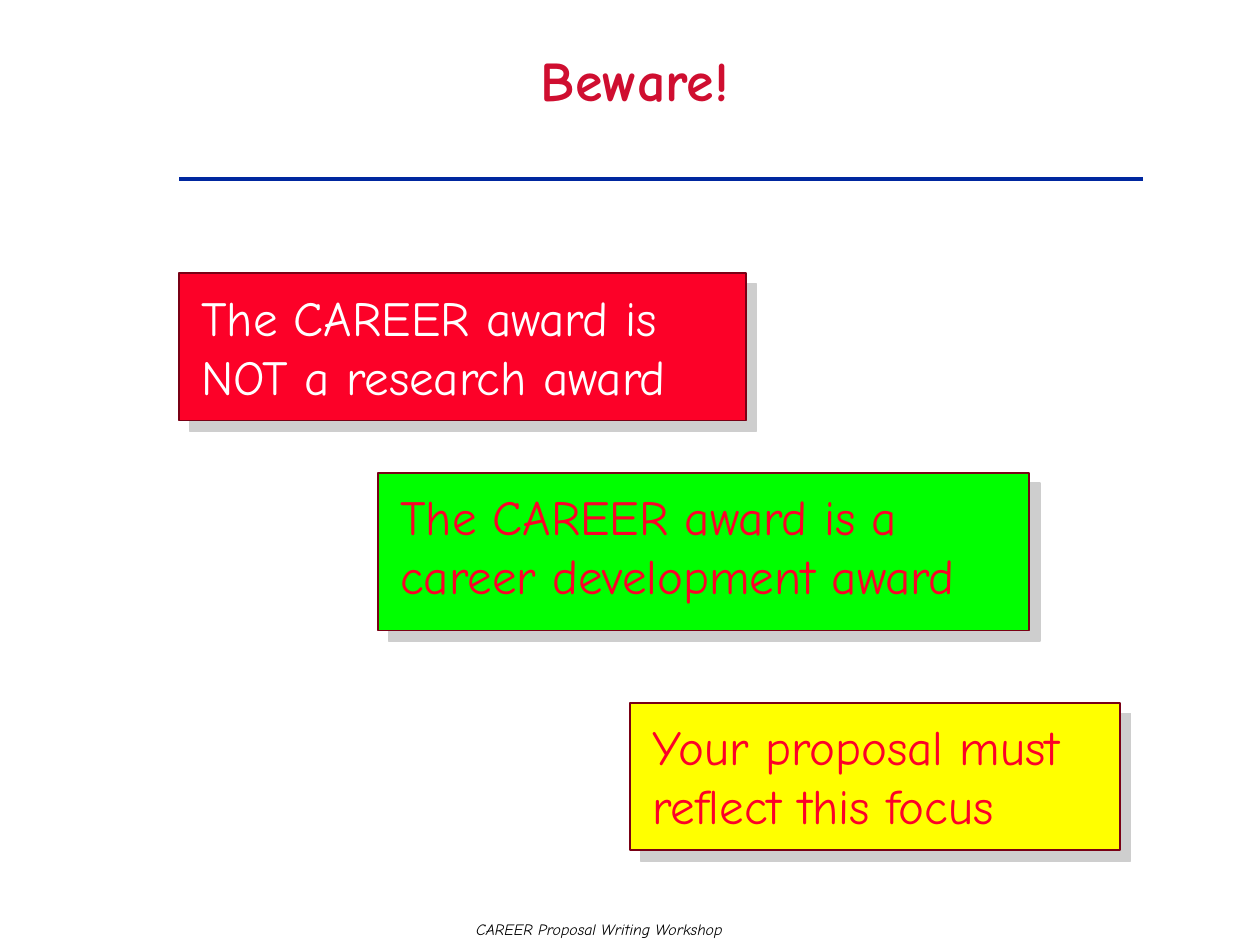
from dataclasses import dataclass
from lxml.etree import SubElement
from pptx import Presentation
from pptx.dml.color import RGBColor
from pptx.enum.shapes import MSO_CONNECTOR, MSO_SHAPE
from pptx.enum.text import MSO_ANCHOR, PP_ALIGN
from pptx.oxml import parse_xml
from pptx.oxml.ns import nsdecls, qn
from pptx.util import Cm, Pt


@dataclass(frozen=True)
class Theme:
    font: str = "Comic Neue"
    title_size: int = 32
    card_size: int = 28
    footer_size: int = 9
    title: str = "CF0E30"
    rule: str = "00279F"
    outline: str = "790015"
    shadow: str = "CECECE"
    title_shadow: str = "808080"
    red: str = "FC0128"
    green: str = "00FF00"
    yellow: str = "FFFF00"
    white: str = "FFFFFF"
    black: str = "000000"


THEME = Theme()
TITLE = "Beware!"
FOOTER = "CAREER Proposal Writing Workshop"
CARDS = [
    ("The CAREER award is NOT a research award", THEME.red, THEME.white, (3.61, 5.51, 11.43, 2.97)),
    ("The CAREER award is a career development award", THEME.green, THEME.red, (7.62, 9.53, 13.13, 3.18)),
    ("Your proposal must reflect this focus", THEME.yellow, THEME.red, (12.7, 14.17, 9.88, 2.97)),
]
LABEL_INSET = (0.2, 0.15)
LABEL_HEIGHT = 2.62


def color(value):
    return RGBColor.from_string(value)


def write(shape, text, size, text_color, align, bold=False, italic=False):
    frame = shape.text_frame
    frame.word_wrap = True
    frame.margin_left = frame.margin_right = Cm(0.25)
    frame.margin_top = frame.margin_bottom = Cm(0.13)
    frame.text = text
    paragraph = frame.paragraphs[0]
    paragraph.alignment = align
    font = paragraph.font
    font.name, font.size = THEME.font, Pt(size)
    font.bold, font.italic = bold, italic
    font.color.rgb = color(text_color)
    return paragraph


def add_rectangle(shapes, box, fill):
    shape = shapes.add_shape(MSO_SHAPE.RECTANGLE, *map(Cm, box))
    shape.shadow.inherit = False
    shape.fill.solid()
    shape.fill.fore_color.rgb = color(fill)
    shape.line.fill.background()
    shape.text_frame.vertical_anchor = MSO_ANCHOR.TOP
    return shape


def shadow_effect(shadow_color, distance):
    return parse_xml(
        f'<a:effectLst {nsdecls("a")}><a:outerShdw dist="{Pt(distance)}" dir="2700000" '
        f'algn="ctr" rotWithShape="0"><a:srgbClr val="{shadow_color}"/>'
        "</a:outerShdw></a:effectLst>"
    )


def add_title(slide):
    title = slide.shapes.title
    title.left, title.top, title.width, title.height = map(Cm, (2.54, 0, 20.52, 3.38))
    paragraph = write(title, TITLE, THEME.title_size, THEME.title, PP_ALIGN.CENTER, bold=True)
    paragraph.line_spacing = 0.87
    title.text_frame.vertical_anchor = MSO_ANCHOR.MIDDLE
    run_properties = paragraph.runs[0].font._element if hasattr(paragraph.runs[0].font, "_element") \
        else paragraph.runs[0]._r.get_or_add_rPr()
    run_properties.append(shadow_effect(THEME.title_shadow, 2))


def add_rule(slide):
    rule = slide.shapes.add_connector(MSO_CONNECTOR.STRAIGHT, *map(Cm, (3.61, 3.61, 23.04, 3.61)))
    rule.line.color.rgb = color(THEME.rule)
    rule.line.width = Pt(2)
    SubElement(rule._element.spPr, qn("a:effectLst"))


def add_card(slide, text, fill, text_color, box):
    left, top, width, _ = box
    inset_x, inset_y = LABEL_INSET
    group = slide.shapes.add_group_shape()
    panel = add_rectangle(group.shapes, box, fill)
    panel.line.color.rgb = color(THEME.outline)
    panel.line.width = Pt(1)
    properties = panel._element.spPr
    properties.replace(properties.find(qn("a:effectLst")), shadow_effect(THEME.shadow, 8.5))
    label_box = (left + inset_x, top + inset_y, width - 2 * inset_x, LABEL_HEIGHT)
    label = add_rectangle(group.shapes, label_box, fill)
    write(label, text, THEME.card_size, text_color, PP_ALIGN.LEFT)


def main():
    presentation = Presentation()
    presentation.slide_width, presentation.slide_height = Cm(25.4), Cm(19.05)
    slide = presentation.slides.add_slide(presentation.slide_layouts[5])
    footer = add_rectangle(slide.shapes, (6.15, 18.42, 11.86, 0.63), THEME.white)
    write(footer, FOOTER, THEME.footer_size, THEME.black, PP_ALIGN.CENTER, italic=True)
    add_rule(slide)
    add_title(slide)
    for card in CARDS:
        add_card(slide, *card)
    presentation.save("out.pptx")


if __name__ == "__main__":
    main()
